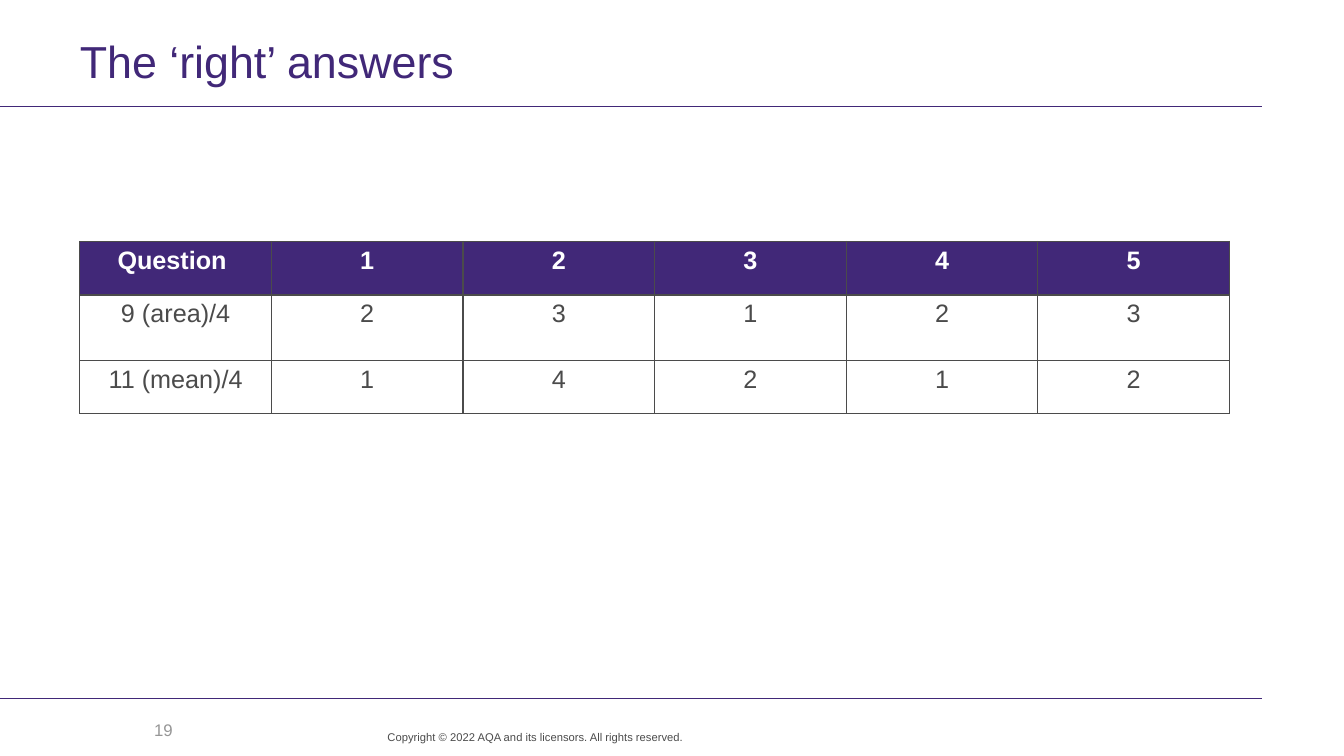
import pptx
import pptx.dml.color
import pptx.enum.shapes
import pptx.enum.text
import pptx.oxml
import pptx.oxml.ns
import pptx.util

RGBColor = pptx.dml.color.RGBColor
PURPLE = RGBColor(0x41, 0x28, 0x78)
DARK_GREY = RGBColor(0x4B, 0x4B, 0x4B)
LIGHT_GREY = RGBColor(0x96, 0x96, 0x96)
WHITE = RGBColor(0xFF, 0xFF, 0xFF)

ALIGN = pptx.enum.text.PP_ALIGN
ANCHOR = pptx.enum.text.MSO_ANCHOR
FONT = "Arial"
EMU_PER_PX = 9525

LEFT = 76
RULE_END = 1202
ANSWERS = [
    ["Question ", "1", "2", "3", "4", "5"],
    ["9 (area)/4", "2", "3", "1", "2", "3"],
    ["11 (mean)/4", "1", "4", "2", "1", "2"],
]
ROW_HEIGHTS = [51, 62, 51]


def px(length):
    return pptx.util.Emu(length * EMU_PER_PX)


def write_text(text_frame, text, *, size, color, bold=False,
               align=ALIGN.LEFT, line_spacing=None):
    paragraph = text_frame.paragraphs[0]
    paragraph.alignment = align
    if line_spacing:
        paragraph.line_spacing = pptx.util.Pt(line_spacing)
    run = paragraph.add_run()
    run.text = text
    run.font.name = FONT
    run.font.size = pptx.util.Pt(size)
    run.font.bold = bold
    run.font.color.rgb = color


def add_text(slide, text, box, *, insets=None, anchor=ANCHOR.TOP, **text_format):
    """Add a wrapping text box; insets are left, top, right, bottom in px."""
    shape = slide.shapes.add_textbox(*map(px, box))
    text_frame = shape.text_frame
    text_frame.word_wrap = True
    text_frame.vertical_anchor = anchor
    if insets:
        (text_frame.margin_left, text_frame.margin_top,
         text_frame.margin_right, text_frame.margin_bottom) = map(px, insets)
    write_text(text_frame, text, **text_format)


def add_rule(slide, top):
    connector = slide.shapes.add_connector(
        pptx.enum.shapes.MSO_CONNECTOR.STRAIGHT,
        px(0), px(top), px(RULE_END), px(top))
    connector.line.color.rgb = PURPLE
    connector.line.width = pptx.util.Pt(0.6)
    properties = connector._element.spPr
    properties.append(properties.makeelement(pptx.oxml.ns.qn("a:effectLst"), {}))


def set_borders(cell, color, width):
    """Draw all four cell borders; they must come before the fill in the XML."""
    properties = cell._tc.get_or_add_tcPr()
    for position, side in enumerate(("lnL", "lnR", "lnT", "lnB")):
        border = pptx.oxml.parse_xml(
            f'<a:{side} {pptx.oxml.ns.nsdecls("a")} w="{pptx.util.Pt(width)}">'
            f'<a:solidFill><a:srgbClr val="{color}"/></a:solidFill></a:{side}>')
        properties.insert(position, border)


def add_answer_table(slide, left, top, width):
    table = slide.shapes.add_table(
        len(ANSWERS), len(ANSWERS[0]),
        px(left), px(top), px(width), px(sum(ROW_HEIGHTS))).table
    for row_index, (answers, height) in enumerate(zip(ANSWERS, ROW_HEIGHTS)):
        table.rows[row_index].height = px(height)
        is_header = row_index == 0
        for column_index, answer in enumerate(answers):
            cell = table.cell(row_index, column_index)
            cell.fill.solid()
            cell.fill.fore_color.rgb = PURPLE if is_header else WHITE
            set_borders(cell, DARK_GREY, 1)
            write_text(cell.text_frame, answer, size=18, bold=is_header,
                       color=WHITE if is_header else DARK_GREY,
                       align=ALIGN.CENTER)


def main():
    presentation = pptx.Presentation()
    presentation.slide_width = px(1280)
    presentation.slide_height = px(720)
    slide = presentation.slides.add_slide(presentation.slide_layouts[6])

    for top in (101, 665):
        add_rule(slide, top)
    add_text(slide, "The ‘right’ answers", (LEFT, 46, 1126, 45),
             insets=(0, 0, 10, 0), size=32, color=PURPLE, line_spacing=28)
    add_text(slide, "Copyright © 2022 AQA and its licensors. All rights reserved.",
             (276, 695, 375, 25), insets=(0, 0, 0, 0), size=8, color=DARK_GREY,
             align=ALIGN.RIGHT, line_spacing=10)
    add_text(slide, "19", (LEFT, 676, 98, 38), anchor=ANCHOR.MIDDLE,
             size=12, color=LIGHT_GREY, align=ALIGN.RIGHT)
    add_answer_table(slide, LEFT, 230, 1095)

    presentation.save("out.pptx")


if __name__ == "__main__":
    main()
